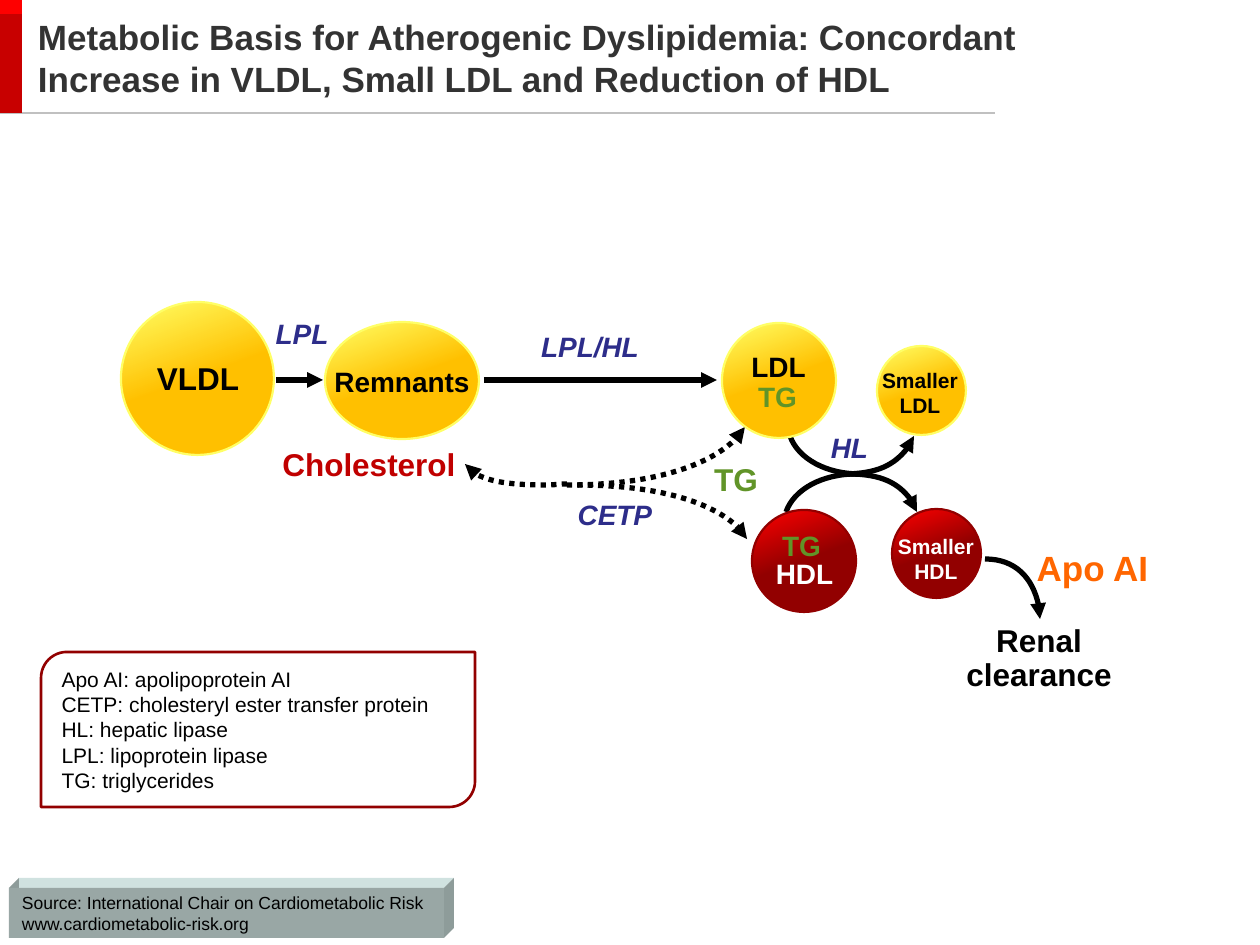
from dataclasses import dataclass

from lxml.etree import SubElement
from pptx import Presentation
from pptx.dml.color import RGBColor
from pptx.enum.dml import MSO_LINE
from pptx.enum.shapes import MSO_CONNECTOR, MSO_SHAPE
from pptx.enum.text import MSO_ANCHOR as Anchor, PP_ALIGN as Align
from pptx.oxml.ns import qn
from pptx.util import Pt

PX = 914400 / 126
FONT = "Arial"

BLACK = RGBColor(0, 0, 0)
WHITE = RGBColor(255, 255, 255)
TITLE_GREY = RGBColor(0x33, 0x33, 0x33)
RULE_GREY = RGBColor(0xC0, 0xC0, 0xC0)
BAR_RED = RGBColor(0xC8, 0, 0)
CAP_RED = RGBColor(0xFE, 0, 0)
LIGHT_YELLOW = RGBColor(0xFF, 0xFF, 0x66)
AMBER = RGBColor(0xFF, 0xC0, 0)
BRIGHT_RED = RGBColor(0xFF, 0, 0)
DARK_RED = RGBColor(0x92, 0, 0)
ENZYME_BLUE = RGBColor(0x2D, 0x2D, 0x8A)
TG_GREEN = RGBColor(0x61, 0x94, 0x28)
CHOLESTEROL_RED = RGBColor(0xC0, 0, 0)
ORANGE = RGBColor(0xFF, 0x66, 0)
SLAB_FACE = RGBColor(0x99, 0xA7, 0xA5)
SLAB_TOP = RGBColor(0xD0, 0xE2, 0xE0)
SLAB_SIDE = RGBColor(0x8E, 0x9C, 0x9A)


@dataclass
class Particle:
    left: int
    top: int
    width: int
    height: int
    light: RGBColor
    dark: RGBColor
    edge: RGBColor


@dataclass
class Label:
    text: str
    center_x: int
    center_y: int
    width: int
    size: int
    color: RGBColor
    italic: bool = False
    spacing: float = 1.0


@dataclass
class Curve:
    points: list[tuple[int, int]]  # start point, then three points per Bezier segment
    arrow: bool = True
    dotted: bool = False


def emu(pixels: float) -> int:
    return round(pixels * PX)


def write(shape, text: str, *, size: int, color: RGBColor, bold=False, italic=False,
          align=Align.LEFT, wrap=True, spacing=1.0, margin_x=13, margin_y=6) -> None:
    frame = shape.text_frame
    frame.word_wrap = wrap
    frame.vertical_anchor = Anchor.MIDDLE
    frame.margin_left = frame.margin_right = emu(margin_x)
    frame.margin_top = frame.margin_bottom = emu(margin_y)
    for index, line in enumerate(text.split("\n")):
        paragraph = frame.paragraphs[0] if index == 0 else frame.add_paragraph()
        paragraph.alignment = align
        paragraph.line_spacing = spacing
        run = paragraph.add_run()
        run.text = line
        font = run.font
        font.name, font.size, font.bold, font.italic = FONT, Pt(size), bold, italic
        font.color.rgb = color


def add_box(slide, kind, left: int, top: int, width: int, height: int, fill: RGBColor):
    shape = slide.shapes.add_shape(kind, emu(left), emu(top), emu(width), emu(height))
    shape.shadow.inherit = False
    shape.fill.solid()
    shape.fill.fore_color.rgb = fill
    shape.line.fill.background()
    return shape


def add_text(slide, text: str, left: int, top: int, width: int, height: int, **style):
    write(slide.shapes.add_textbox(emu(left), emu(top), emu(width), emu(height)), text, **style)


def add_particle(slide, particle: Particle) -> None:
    shape = add_box(slide, MSO_SHAPE.OVAL, particle.left, particle.top,
                    particle.width, particle.height, particle.dark)
    shape.fill.gradient()
    shape.fill.gradient_angle = 290
    stops = zip(shape.fill.gradient_stops, (0, 0.5), (particle.light, particle.dark))
    for stop, position, color in stops:
        stop.position = position
        stop.color.rgb = color
    shape.line.color.rgb = particle.edge
    shape.line.width = Pt(1.25)


def add_outline(slide, points: list[tuple[int, int]], closed: bool):
    corners = [(emu(x), emu(y)) for x, y in points]
    builder = slide.shapes.build_freeform(*corners[0])
    builder.add_line_segments(corners[1:], close=closed)
    shape = builder.convert_to_shape()
    shape.shadow.inherit = False
    return shape


def add_arrowhead(shape) -> None:
    line = shape._element.spPr.find(qn("a:ln"))
    SubElement(line, qn("a:tailEnd"), type="triangle")


def add_line(slide, x1: int, x2: int, y: int, color: RGBColor, width: float, arrow=False) -> None:
    line = slide.shapes.add_connector(MSO_CONNECTOR.STRAIGHT, emu(x1), emu(y), emu(x2), emu(y))
    line.line.color.rgb = color
    line.line.width = Pt(width)
    SubElement(line._element.spPr, qn("a:effectLst"))
    if arrow:
        add_arrowhead(line)


def bend(shape) -> None:
    """Turn every three straight segments into one Bezier segment."""
    segments = list(shape._element.iter(qn("a:lnTo")))
    outline = segments[0].getparent()
    for start in range(0, len(segments), 3):
        bezier = SubElement(outline, qn("a:cubicBezTo"))
        for segment in segments[start:start + 3]:
            bezier.append(segment[0])
            outline.remove(segment)


def add_curve(slide, curve: Curve) -> None:
    shape = add_outline(slide, curve.points, closed=False)
    bend(shape)
    shape.fill.background()
    shape.line.color.rgb = BLACK
    shape.line.width = Pt(3)
    if curve.dotted:
        shape.line.dash_style = MSO_LINE.ROUND_DOT
    if curve.arrow:
        add_arrowhead(shape)


YELLOW = (LIGHT_YELLOW, AMBER, LIGHT_YELLOW)
RED = (BRIGHT_RED, DARK_RED, DARK_RED)
PARTICLES = [
    Particle(121, 302, 153, 153, *YELLOW),  # VLDL
    Particle(325, 322, 154, 117, *YELLOW),  # remnants
    Particle(722, 323, 114, 115, *YELLOW),  # LDL
    Particle(877, 346, 89, 89, *YELLOW),    # smaller LDL
    Particle(752, 510, 104, 102, *RED),     # HDL
    Particle(892, 509, 89, 89, *RED),       # smaller HDL
]
CURVES = [
    Curve([(844, 474), (878, 474), (906, 459), (914, 436)]),
    Curve([(859, 474), (827, 474), (798, 459), (790, 436)], arrow=False),
    Curve([(848, 474), (882, 474), (910, 489), (917, 512)]),
    Curve([(856, 474), (823, 474), (794, 489), (786, 512)], arrow=False),
    Curve([(985, 559), (1016, 559), (1040, 586), (1040, 619)]),
    Curve([(567, 485), (653, 485), (727, 460), (745, 427)], dotted=True),
    Curve([(577, 485), (659, 485), (731, 508), (747, 539)], dotted=True),
    Curve([(567, 484), (560, 484), (554, 485), (547, 485),
           (502, 485), (465, 475), (465, 464)], dotted=True),
]
LABELS = [
    Label("VLDL", 198, 378, 112, 18, BLACK),
    Label("Remnants", 402, 381, 158, 16, BLACK),
    Label("LDL", 778, 366, 81, 16, BLACK),
    Label("TG", 777, 396, 65, 16, TG_GREEN),
    Label("Smaller\nLDL", 920, 392, 90, 12, BLACK),
    Label("TG", 801, 545, 65, 16, TG_GREEN),
    Label("HDL", 804, 573, 83, 16, WHITE),
    Label("Smaller\nHDL", 936, 558, 90, 12, WHITE),
    Label("LPL", 302, 333, 70, 16, ENZYME_BLUE, italic=True),
    Label("LPL/HL", 590, 346, 110, 16, ENZYME_BLUE, italic=True),
    Label("HL", 849, 447, 55, 16, ENZYME_BLUE, italic=True),
    Label("CETP", 615, 514, 90, 16, ENZYME_BLUE, italic=True),
    Label("TG", 736, 479, 70, 18, TG_GREEN),
    Label("Cholesterol", 369, 464, 186, 18, CHOLESTEROL_RED),
    Label("Apo AI", 1092, 568, 141, 20, ORANGE),
    Label("Renal\nclearance", 1039, 659, 170, 18, BLACK, spacing=0.9),
]
SLAB_EDGES = [
    ([(19, 878), (454, 878), (444, 888), (19, 888)], SLAB_TOP),
    ([(9, 888), (19, 878), (19, 888)], SLAB_SIDE),
    ([(444, 888), (454, 878), (454, 928), (444, 938)], SLAB_SIDE),
]


def main() -> None:
    presentation = Presentation()
    presentation.slide_width, presentation.slide_height = emu(1260), emu(945)
    slide = presentation.slides.add_slide(presentation.slide_layouts[6])

    # Header
    add_line(slide, 0, 995, 113, RULE_GREY, 0.75)
    add_box(slide, MSO_SHAPE.RECTANGLE, 0, 0, 22, 113, BAR_RED)
    add_box(slide, MSO_SHAPE.RECTANGLE, 0, 0, 22, 14, CAP_RED)
    add_text(slide, "Metabolic Basis for Atherogenic Dyslipidemia: Concordant "
             "Increase in VLDL, Small LDL and Reduction of HDL",
             25, 0, 1142, 115, size=20, color=TITLE_GREY, bold=True)

    # Source slab
    for points, color in SLAB_EDGES:
        edge = add_outline(slide, points, closed=True)
        edge.fill.solid()
        edge.fill.fore_color.rgb = color
        edge.line.fill.background()
    face = add_box(slide, MSO_SHAPE.RECTANGLE, 9, 888, 435, 50, SLAB_FACE)
    write(face, "Source: International Chair on Cardiometabolic Risk\nwww.cardiometabolic-risk.org",
          size=10, color=BLACK)

    # Pathway
    for curve in CURVES:
        add_curve(slide, curve)
    for particle in PARTICLES:
        add_particle(slide, particle)
    for start, end in ((276, 323), (484, 717)):
        add_line(slide, start, end, 380, BLACK, 3, arrow=True)
    for label in LABELS:
        height = 63 if label.size == 12 else 80 if "\n" in label.text else 48
        add_text(slide, label.text, label.center_x - label.width // 2,
                 label.center_y - height // 2, label.width, height,
                 size=label.size, color=label.color, bold=True, italic=label.italic,
                 align=Align.CENTER, wrap=False, spacing=label.spacing, margin_x=0)

    # Abbreviations
    legend = add_box(slide, MSO_SHAPE.ROUND_2_DIAG_RECTANGLE, 41, 652, 434, 155, WHITE)
    legend.line.color.rgb = DARK_RED
    legend.line.width = Pt(1.5)
    write(legend, "Apo AI: apolipoprotein AI\nCETP: cholesteryl ester transfer protein\n"
          "HL: hepatic lipase\nLPL: lipoprotein lipase\nTG: triglycerides",
          size=12, color=BLACK, margin_y=0)

    presentation.save("out.pptx")


if __name__ == "__main__":
    main()
